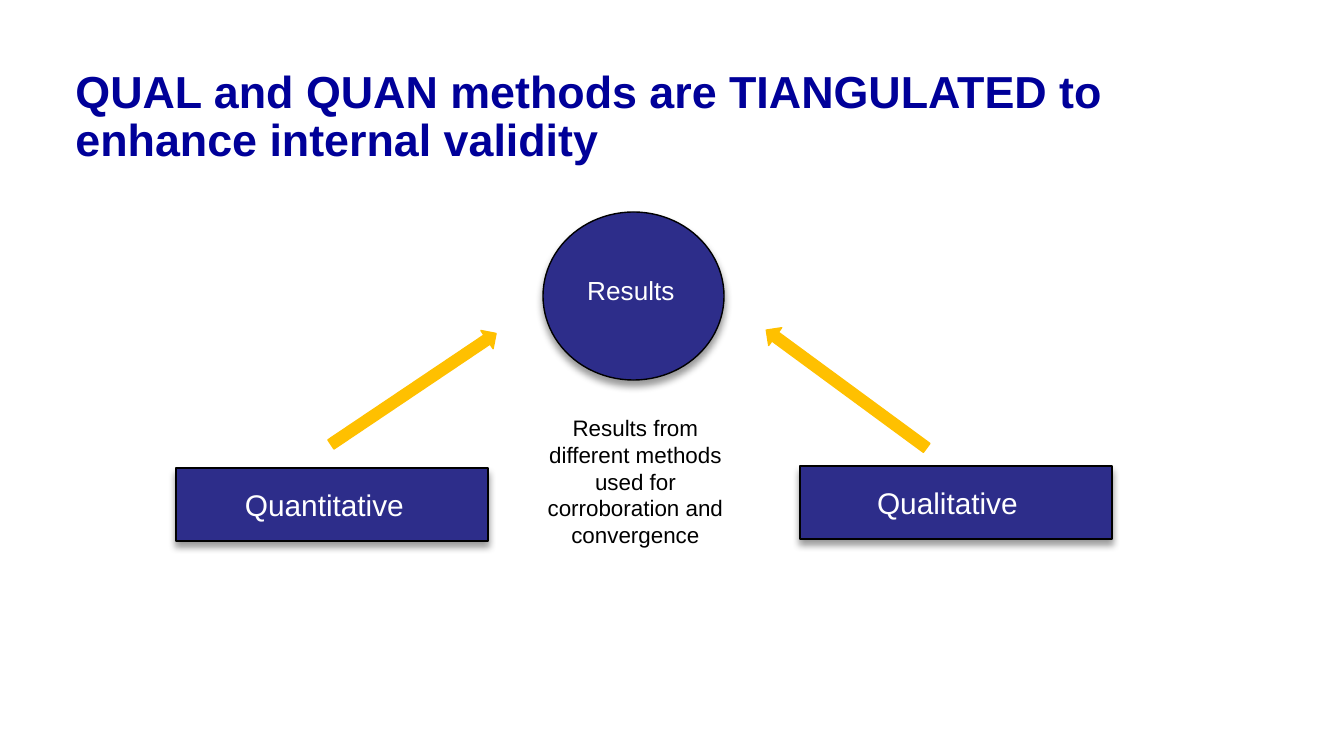
from dataclasses import dataclass

from lxml.etree import SubElement
from pptx import Presentation
from pptx.dml.color import RGBColor
from pptx.enum.shapes import MSO_SHAPE
from pptx.enum.text import MSO_ANCHOR, PP_ALIGN
from pptx.oxml.ns import qn
from pptx.util import Pt

# Content
TITLE = "QUAL and QUAN methods are TIANGULATED to enhance internal validity"

# Shapes: kind, box in px
PANELS = [
    (MSO_SHAPE.RECTANGLE, (176, 468, 312, 73)),
    (MSO_SHAPE.RECTANGLE, (800, 466, 312, 73)),
    (MSO_SHAPE.OVAL, (543, 212, 181, 168)),
]

# Arrows: box in px, rotation in degrees
ARROWS = [
    ((314, 378, 199, 22), 326.1),
    ((747, 378, 199, 22), 216.3),
]

# Labels: text, box in px, size role, colour role, alignment, top inset in px
LABELS = [
    ("Quantitative", (194, 480, 261, 50), "method", "light", PP_ALIGN.CENTER, 7),
    ("Qualitative", (817, 478, 261, 50), "method", "light", PP_ALIGN.CENTER, 7),
    ("Results", (574, 237, 132, 132), "result", "light", PP_ALIGN.LEFT, 37),
    ("Results from different methods used for corroboration and convergence",
     (520, 407, 231, 149), "note", "dark", PP_ALIGN.CENTER, 7),
]


@dataclass
class Theme:
    font: str = "Arial"
    title: str = "000099"
    panel: str = "2D2D8A"
    arrow: str = "FFC000"
    light: str = "FFFFFF"
    dark: str = "000000"
    sizes = {"title": 24, "method": 16, "result": 14, "note": 12}


theme = Theme()
SCALE = 914400 / 134.4


def px(n):
    return round(n * SCALE)


def rgb(role):
    return RGBColor.from_string(getattr(theme, role))


def style(para, size, role, bold=False):
    font = para.font
    font.name, font.size, font.bold = theme.font, Pt(theme.sizes[size]), bold
    font.color.rgb = rgb(role)


def draw(kind, box, fill, line):
    shape = slide.shapes.add_shape(kind, *map(px, box))
    shape.shadow.inherit = False
    shape.fill.solid()
    shape.fill.fore_color.rgb = rgb(fill)
    shape.line.color.rgb = rgb(line)
    shape.line.width = Pt(0.75)
    return shape


def shade(shape):
    """Add a soft shadow that falls straight down."""
    effects = shape._element.spPr.find(qn("a:effectLst"))
    outer = SubElement(effects, qn("a:outerShdw"), blurRad=str(Pt(4)),
                       dist=str(Pt(3)), dir="5400000", rotWithShape="0")
    tint = SubElement(outer, qn("a:srgbClr"), val=theme.dark)
    SubElement(tint, qn("a:alpha"), val="40000")


deck = Presentation()
deck.slide_width, deck.slide_height = px(1344), px(756)
slide = deck.slides.add_slide(deck.slide_layouts[5])

# Title
head = slide.shapes.title
head.left, head.top, head.width, head.height = map(px, (62, 63, 1219, 95))
frame = head.text_frame
frame.text = TITLE
frame.word_wrap = True
frame.vertical_anchor = MSO_ANCHOR.TOP
para = frame.paragraphs[0]
para.alignment = PP_ALIGN.LEFT
para.line_spacing = 0.9
style(para, "title", "title", True)

# Panels and circle
for kind, box in PANELS:
    shade(draw(kind, box, "panel", "dark"))

# Arrows towards the results
for box, turn in ARROWS:
    draw(MSO_SHAPE.RIGHT_ARROW, box, "arrow", "arrow").rotation = turn

# Labels
for text, box, size, role, align, inset in LABELS:
    frame = slide.shapes.add_textbox(*map(px, box)).text_frame
    frame.text = text
    frame.word_wrap = True
    frame.margin_top = px(inset)
    para = frame.paragraphs[0]
    para.alignment = align
    style(para, size, role)

deck.save("out.pptx")
